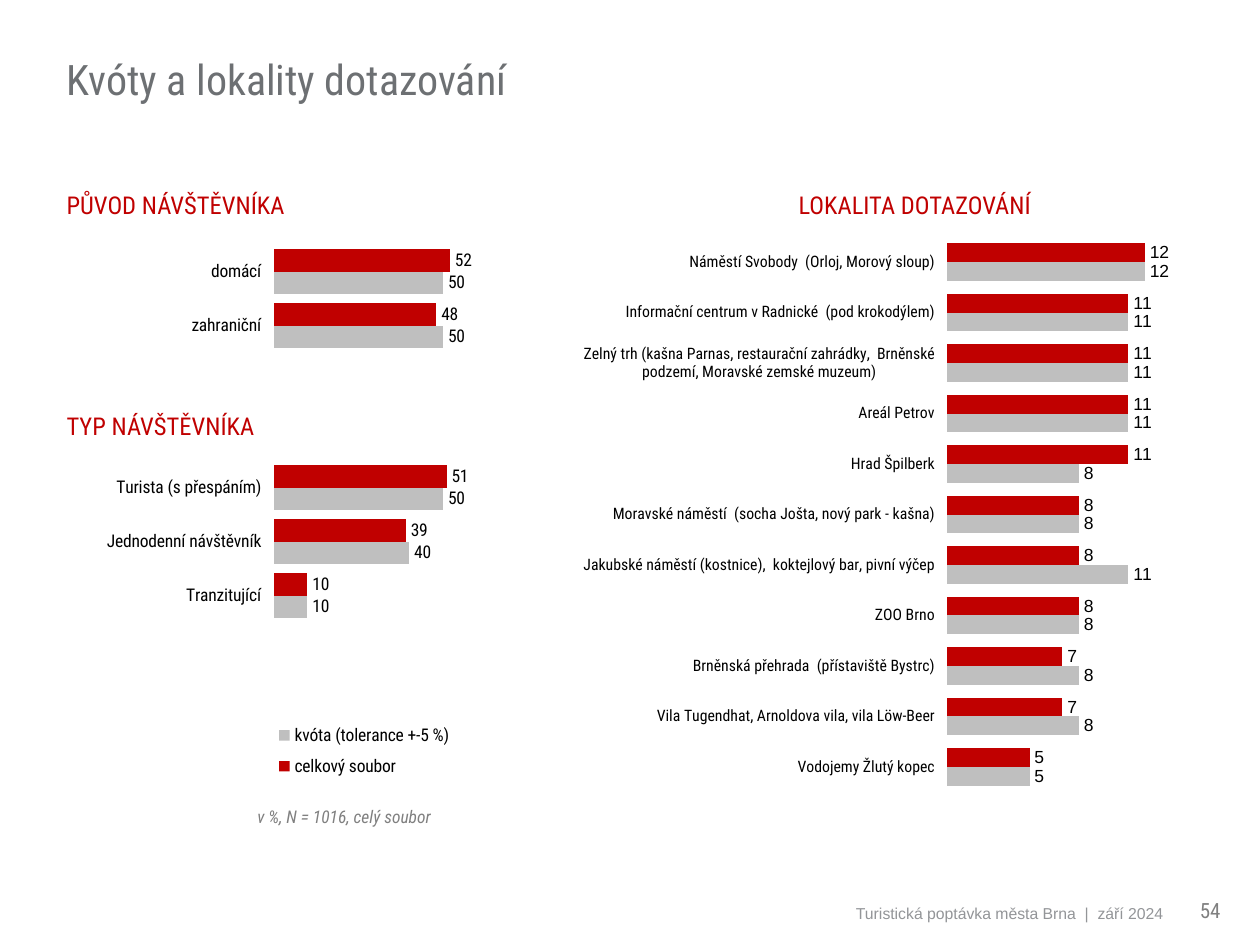
"""Build the slide on survey quotas and interview locations."""
from dataclasses import dataclass
from typing import Optional

import pptx
import pptx.chart.chart
import pptx.chart.data
import pptx.dml.color
import pptx.enum.chart
import pptx.enum.text
import pptx.oxml
import pptx.oxml.ns
import pptx.slide
import pptx.util
from lxml import etree

Inches = pptx.util.Inches
RGBColor = pptx.dml.color.RGBColor
Align = pptx.enum.text.PP_ALIGN
Anchor = pptx.enum.text.MSO_ANCHOR

RED = RGBColor(0xC0, 0x00, 0x00)
SILVER = RGBColor(0xBF, 0xBF, 0xBF)
BLACK = RGBColor(0x00, 0x00, 0x00)
TITLE_GRAY = RGBColor(0x6D, 0x70, 0x73)
FOOTER_GRAY = RGBColor(0x93, 0x95, 0x98)
NOTE_GRAY = RGBColor(0x80, 0x80, 0x80)
CONDENSED = "Roboto Condensed"
ARIAL = "Arial"

Box = tuple[float, float, float, float]


@dataclass
class Label:
    text: str
    box: Box
    size: int
    color: RGBColor
    font: str = CONDENSED
    align: Align = Align.LEFT
    anchor: Anchor = Anchor.TOP
    italic: bool = False


@dataclass
class Row:
    place: str
    total: Optional[int] = None
    quota: Optional[int] = None


@dataclass
class BarPanel:
    box: Box
    plot: Box
    rows: list[Row]
    gap: int
    maximum: int
    axis_size: int
    value_font: str
    legend: Optional[Box] = None


LABELS = [
    Label("Kvóty a lokality dotazování", (0.43, 0.13, 7.17, 0.99), 24, TITLE_GRAY,
          anchor=Anchor.MIDDLE),
    *(Label(heading, (left, top, 2.7, 0.34), 14, RED) for heading, left, top in (
        ("PŮVOD NÁVŠTĚVNÍKA", 0.43, 1.46),
        ("TYP NÁVŠTĚVNÍKA", 0.43, 3.21),
        ("LOKALITA DOTAZOVÁNÍ", 6.24, 1.46))),
    Label("v %, N = 1016, celý soubor", (1.76, 6.35, 1.94, 0.27), 10, NOTE_GRAY,
          align=Align.CENTER, italic=True),
    Label("Turistická poptávka města Brna  |  září 2024", (0.49, 6.98, 8.84, 0.39), 9,
          FOOTER_GRAY, ARIAL, Align.RIGHT, Anchor.BOTTOM),
    Label("54", (9.33, 6.98, 0.55, 0.39), 12, NOTE_GRAY,
          align=Align.CENTER, anchor=Anchor.BOTTOM),
]

LOCATIONS = BarPanel(
    (4.45, 1.55, 7.48, 5.51), (0.41, 0.06, 0.35, 0.8),
    [
        Row("Náměstí Svobody  (Orloj, Morový sloup)", 12, 12),
        Row("Informační centrum v Radnické  (pod krokodýlem)", 11, 11),
        Row("Zelný trh (kašna Parnas, restaurační zahrádky,  Brněnské podzemí, "
            "Moravské zemské muzeum)", 11, 11),
        Row("Areál Petrov", 11, 11),
        Row("Hrad Špilberk", 11, 8),
        Row("Moravské náměstí  (socha Jošta, nový park - kašna)", 8, 8),
        Row("Jakubské náměstí (kostnice),  koktejlový bar, pivní výčep", 8, 11),
        Row("ZOO Brno", 8, 8),
        Row("Brněnská přehrada  (přístaviště Bystrc)", 7, 8),
        Row("Vila Tugendhat, Arnoldova vila, vila Löw-Beer", 7, 8),
        Row("Vodojemy Žlutý kopec", 5, 5),
    ],
    gap=70, maximum=20, axis_size=9, value_font=ARIAL)

VISITORS = BarPanel(
    (0.51, 1.7, 4.49, 4.84), (0.37, 0.05, 0.36, 0.62),
    [
        Row("domácí", 52, 50),
        Row("zahraniční", 48, 50),
        Row(""),
        Row(""),
        Row("Turista (s přespáním)", 51, 50),
        Row("Jednodenní návštěvník", 39, 40),
        Row("Tranzitující", 10, 10),
    ],
    gap=40, maximum=60, axis_size=10, value_font=CONDENSED,
    legend=(0.32, 0.82, 0.42, 0.12))


def set_font(font, name: str, size: int, color: RGBColor) -> None:
    font.name = name
    font.size = pptx.util.Pt(size)
    font.color.rgb = color


def add_label(slide: pptx.slide.Slide, label: Label) -> None:
    frame = slide.shapes.add_textbox(*map(Inches, label.box)).text_frame
    frame.word_wrap = True
    frame.vertical_anchor = label.anchor
    paragraph = frame.paragraphs[0]
    paragraph.text = label.text
    paragraph.alignment = label.align
    set_font(paragraph.font, label.font, label.size, label.color)
    paragraph.font.italic = label.italic


def place(parent: etree._Element, index: int, box: Box, inner: bool = False) -> None:
    qn = pptx.oxml.ns.qn
    for old in parent.findall(qn("c:layout")):
        parent.remove(old)
    layout = etree.Element(qn("c:layout"))
    manual = etree.SubElement(layout, qn("c:manualLayout"))
    settings = [("layoutTarget", "inner")] if inner else []
    settings += [("xMode", "edge"), ("yMode", "edge"), *zip("xywh", map(str, box))]
    for tag, value in settings:
        etree.SubElement(manual, qn(f"c:{tag}"), val=value)
    parent.insert(index, layout)


def add_legend(chart: pptx.chart.chart.Chart, box: Box) -> None:
    chart.has_legend = True
    legend = chart.legend
    legend.position = pptx.enum.chart.XL_LEGEND_POSITION.RIGHT
    legend.include_in_layout = False
    set_font(legend.font, CONDENSED, 10, BLACK)
    place(chart.element.find(".//" + pptx.oxml.ns.qn("c:legend")), 1, box)


def add_bar_panel(slide: pptx.slide.Slide, panel: BarPanel) -> None:
    data = pptx.chart.data.CategoryChartData()
    data.categories = [row.place for row in panel.rows]
    data.add_series("celkový soubor", [row.total for row in panel.rows])
    data.add_series("kvóta (tolerance +-5 %)", [row.quota for row in panel.rows])
    chart = slide.shapes.add_chart(pptx.enum.chart.XL_CHART_TYPE.BAR_CLUSTERED,
                                   *map(Inches, panel.box), data).chart
    chart.has_title = False
    chart.has_legend = False
    set_font(chart.font, panel.value_font, 10, BLACK)
    place(chart.element.find(".//" + pptx.oxml.ns.qn("c:plotArea")), 0, panel.plot, True)

    categories = chart.category_axis
    categories.reverse_order = True
    categories.format.line.fill.background()
    set_font(categories.tick_labels.font, CONDENSED, panel.axis_size, BLACK)
    values = chart.value_axis
    values.minimum_scale, values.maximum_scale = 0, panel.maximum
    values.major_unit = 10
    values.has_major_gridlines = False
    values.visible = False

    bars = chart.plots[0]
    bars.gap_width = panel.gap
    bars.overlap = 0
    bars.vary_by_categories = False
    for series, color in zip(bars.series, (RED, SILVER)):
        series.format.fill.solid()
        series.format.fill.fore_color.rgb = color
        labels = series.data_labels
        labels.show_value = True
        labels.number_format = "#,##0"
        labels.number_format_is_linked = False
        labels.position = pptx.enum.chart.XL_LABEL_POSITION.OUTSIDE_END
        set_font(labels.font, panel.value_font, 10, BLACK)
    if panel.legend:
        add_legend(chart, panel.legend)


def main() -> None:
    deck = pptx.Presentation()
    deck.slide_width, deck.slide_height = Inches(10), Inches(7.5)
    slide = deck.slides.add_slide(deck.slide_layouts[6])
    for panel in (LOCATIONS, VISITORS):
        add_bar_panel(slide, panel)
    for label in LABELS:
        add_label(slide, label)
    deck.save("out.pptx")


if __name__ == "__main__":
    main()
